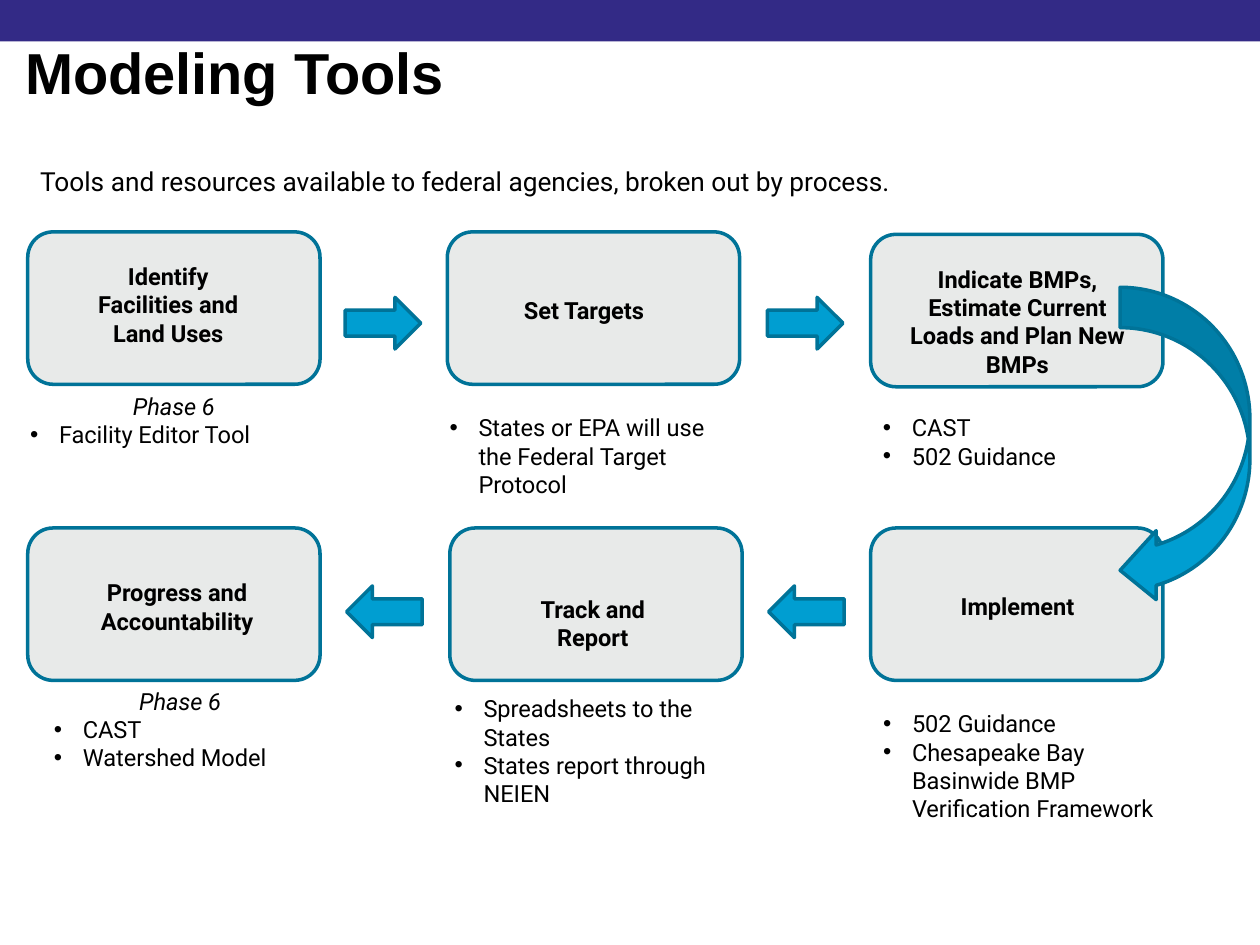
from lxml.etree import SubElement
from pptx import Presentation
from pptx.dml.color import RGBColor
from pptx.enum.shapes import MSO_SHAPE as Shape
from pptx.enum.text import PP_ALIGN as Align
from pptx.oxml.ns import qn
from pptx.util import Inches, Pt

BLACK = RGBColor(0x00, 0x00, 0x00)
NAVY = RGBColor(0x33, 0x2A, 0x86)
GREY = RGBColor(0xE8, 0xEA, 0xE9)
TEAL = RGBColor(0x00, 0x73, 0x98)
BLUE = RGBColor(0x00, 0x9E, 0xD1)

TITLE = "Modeling Tools"
INTRO = "Tools and resources available to federal agencies, broken out by process."

STEP_SIZE = (2.32, 1.21)
ARROW_SIZE = (0.6, 0.41)

# step corner, label, label frame, phase, tools, tools frame
STEPS = [
    ((0.22, 1.84), "Identify Facilities and Land Uses", (0.53, 2.03, 1.61, 0.86),
     "Phase 6", ["Facility Editor Tool"], (0.14, 3.06, 2.48, 0.78)),
    ((3.55, 1.84), "Set Targets", (3.9, 2.3, 1.47, 0.33),
     None, ["States or EPA will use the Federal Target Protocol"], (3.47, 3.23, 2.47, 1.01)),
    ((6.91, 1.86), "Indicate BMPs, Estimate Current Loads and Plan New BMPs",
     (7.09, 2.05, 1.97, 1.01),
     None, ["CAST", "502 Guidance"], (6.91, 3.23, 1.96, 0.78)),
    ((6.91, 4.19), "Implement", (7.38, 4.65, 1.39, 0.33),
     None, ["502 Guidance", "Chesapeake Bay Basinwide BMP Verification Framework"],
     (6.91, 5.58, 2.65, 1.24)),
    ((3.57, 4.19), "Track and Report", (3.97, 4.67, 1.47, 0.56),
     None, ["Spreadsheets to the States", "States report through NEIEN"],
     (3.51, 5.46, 2.47, 1.46)),
    ((0.22, 4.19), "Progress and Accountability", (0.68, 4.54, 1.45, 0.56),
     "Phase 6", ["CAST", "Watershed Model"], (0.33, 5.4, 2.2, 1.01)),
]
ARROWS = [(2.74, 2.36, 0), (6.09, 2.36, 0), (6.1, 4.65, 180), (2.75, 4.65, 180)]
RETURN_ARROW = (8.89, 2.28, 1.03, 2.52)
RETURN_BENDS = (0.311, 0.531, 0.278)


def add_block(slide, kind, frame, fill, line=None):
    block = slide.shapes.add_shape(kind, *map(Inches, frame))
    block.shadow.inherit = False
    block.fill.solid()
    block.fill.fore_color.rgb = fill
    if line is None:
        block.line.fill.background()
    else:
        block.line.color.rgb = line
        block.line.width = Pt(2)
    return block


def add_frame(slide, frame):
    text_frame = slide.shapes.add_textbox(*map(Inches, frame)).text_frame
    text_frame.word_wrap = True
    return text_frame


def style(paragraph, text, size=13.5, name="Roboto", bold=False, italic=False, align=Align.LEFT):
    paragraph.text = text
    paragraph.alignment = align
    font = paragraph.font
    font.size, font.name, font.bold, font.italic = Pt(size), name, bold, italic
    font.color.rgb = BLACK


def add_bullet(paragraph):
    properties = paragraph._p.get_or_add_pPr()
    properties.set("marL", str(Inches(0.23)))
    properties.set("indent", str(Inches(-0.23)))
    bullet_font = properties.makeelement(qn("a:buFont"), {"typeface": "Arial"})
    properties.insert(0, bullet_font)
    bullet = properties.makeelement(qn("a:buChar"), {"char": "•"})
    bullet_font.addnext(bullet)


def add_tools(slide, phase, tools, frame):
    text_frame = add_frame(slide, frame)
    lines = ([phase] if phase else []) + tools
    for index, line in enumerate(lines):
        paragraph = text_frame.add_paragraph() if index else text_frame.paragraphs[0]
        if phase and index == 0:
            style(paragraph, line, italic=True, align=Align.CENTER)
        else:
            style(paragraph, line)
            add_bullet(paragraph)


def main():
    deck = Presentation()
    deck.slide_width, deck.slide_height = Inches(10), Inches(7.5)
    slide = deck.slides.add_slide(deck.slide_layouts[6])

    add_block(slide, Shape.RECTANGLE, (0, 0, 10, 0.33), NAVY)

    for corner, label, label_frame, phase, tools, tools_frame in STEPS:
        add_block(slide, Shape.ROUNDED_RECTANGLE, corner + STEP_SIZE, GREY, TEAL)
        label_text = add_frame(slide, label_frame)
        style(label_text.paragraphs[0], label, bold=True, align=Align.CENTER)
        add_tools(slide, phase, tools, tools_frame)

    for left, top, turn in ARROWS:
        arrow = add_block(slide, Shape.RIGHT_ARROW, (left, top) + ARROW_SIZE, BLUE, TEAL)
        arrow.rotation = turn

    intro = add_frame(slide, (0.22, 1.26, 8.06, 0.35))
    style(intro.paragraphs[0], INTRO, size=15)

    title = add_frame(slide, (0, 0.38, 10, 0.68))
    title.margin_left = Inches(0.2)
    title.margin_top = title.margin_right = title.margin_bottom = 0
    style(title.paragraphs[0], TITLE, size=33, name="Arial", bold=True)
    title.paragraphs[0].line_spacing = 0.85

    return_arrow = add_block(slide, Shape.CURVED_LEFT_ARROW, RETURN_ARROW, BLUE, TEAL)
    for index, bend in enumerate(RETURN_BENDS):
        return_arrow.adjustments[index] = bend

    deck.save("out.pptx")


if __name__ == "__main__":
    main()
